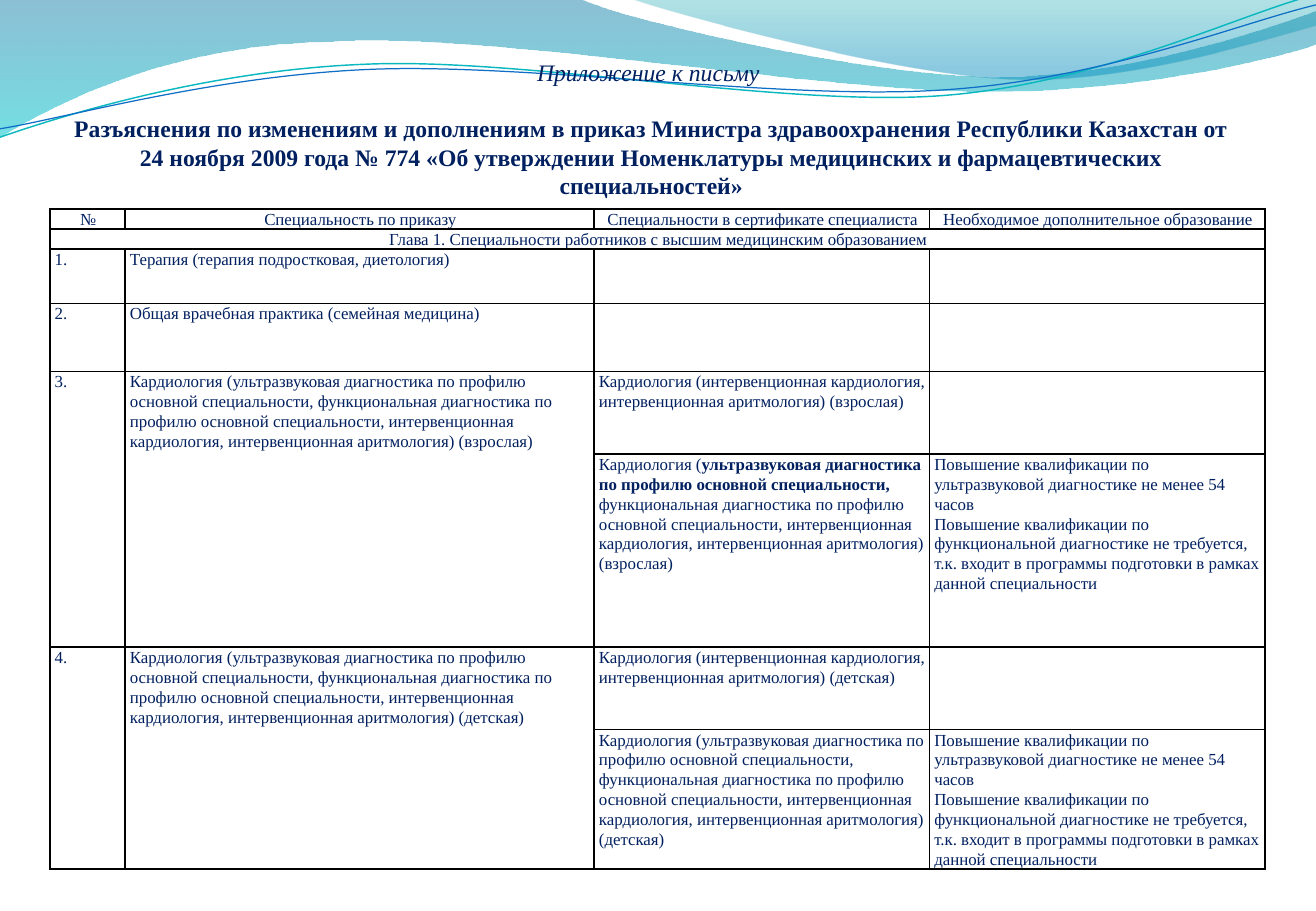
from lxml import etree
from pptx import Presentation
from pptx import util as u
from pptx.dml.color import RGBColor
from pptx.enum import text
from pptx.oxml import ns

NAVY = RGBColor(0x00, 0x20, 0x60)
DEEP_BLUE = RGBColor(0x00, 0x74, 0xA1)
CYAN = RGBColor(0x00, 0xC6, 0xCF)
TEAL = RGBColor(0x00, 0xA1, 0xA9)
SKY = RGBColor(0x00, 0x8B, 0xBF)
LINE_TEAL = RGBColor(0x0A, 0xB8, 0xBF)
LINE_BLUE = RGBColor(0x0F, 0x6F, 0xC6)
BLACK = RGBColor(0x00, 0x00, 0x00)

LEFT_WAVE = [
    (0, 0), (4.77, -0.01),
    (5.15, 0.17, 7.19, 0.63, 8.22, 0.63), (9.24, 0.63, 10.38, 0.26, 10.83, 0.09),
    (10.84, 0.36),
    (10.65, 0.44, 9.42, 0.76, 8.08, 0.75), (6.74, 0.75, 4.14, 0.28, 2.79, 0.34),
    (1.4, 0.36, 0.5, 0.83, -0.01, 1.13),
]
RIGHT_WAVE = [
    (5.19, -0.01),
    (5.52, 0.11, 7.39, 0.62, 8.33, 0.65), (9.27, 0.69, 10.42, 0.32, 10.83, 0.21),
    (10.83, 0),
]
TEAL_CURVE = [
    (0, 1.13), (0.52, 0.95, 1.71, 0.58, 3, 0.53),
    (4.28, 0.47, 6.42, 0.88, 7.72, 0.79), (9.02, 0.7, 10.17, 0.13, 10.81, -0.04),
]
BLUE_CURVE = [
    (0, 1.06), (0.51, 0.98, 1.77, 0.62, 3.07, 0.57),
    (4.36, 0.52, 6.47, 0.83, 7.76, 0.74), (9.06, 0.66, 10.2, 0.19, 10.83, 0.04),
]

COLUMN_WIDTHS = [0.62, 3.86, 2.76, 2.76]
ROW_HEIGHTS = [0.16, 0.16, 0.45, 0.56, 0.68, 1.59, 0.68, 1.14]
MERGES = [(1, 0, 1, 3), (4, 0, 5, 0), (4, 1, 5, 1), (6, 0, 7, 0), (6, 1, 7, 1)]

ULTRASOUND = "ультразвуковая диагностика по профилю основной специальности,"
FUNCTIONAL = " функциональная диагностика по профилю основной специальности, "
INTERVENTION = "интервенционная кардиология, интервенционная аритмология)"
TRAINING = (
    "Повышение квалификации по ультразвуковой диагностике не менее 54 часов\n"
    "Повышение квалификации по функциональной диагностике не требуется, "
    "т.к. входит в программы подготовки в рамках данной специальности"
)


def cardiology(patients):
    """Return the full cardiology specialty for a group of patients."""
    return f"Кардиология ({ULTRASOUND}{FUNCTIONAL}{INTERVENTION} ({patients})"


def cardiology_short(patients):
    """Return the interventional cardiology specialty for a group of patients."""
    return f"Кардиология ({INTERVENTION} ({patients})"


SPECIALTIES = [
    ["№", "Специальность по приказу", "Специальности в сертификате специалиста",
     "Необходимое дополнительное образование"],
    ["Глава 1. Специальности работников с высшим медицинским образованием", "", "", ""],
    ["1.", "Терапия (терапия подростковая, диетология)", "", ""],
    ["2.", "Общая врачебная практика (семейная медицина)", "", ""],
    ["3.", cardiology("взрослая"), cardiology_short("взрослая"), ""],
    ["", "", cardiology("взрослая"), TRAINING],
    ["4.", cardiology("детская"), cardiology_short("детская"), ""],
    ["", "", cardiology("детская"), TRAINING],
]
BOLD_PARTS = {(5, 2): ULTRASOUND}


class SlideBuilder:
    """Holds the text style and the current slide."""

    font_name = "Times New Roman"
    font_color = NAVY

    def __init__(self, presentation):
        """Add a title-only slide."""
        self.slide = presentation.slides.add_slide(presentation.slide_layouts[5])

    def style(self, font, size, bold=False, italic=False):
        """Apply the slide's font to a font object."""
        font.name, font.size = self.font_name, u.Pt(size)
        font.bold, font.italic = bold, italic
        font.color.rgb = self.font_color

    def add_run(self, paragraph, words, size, bold=False, italic=False):
        """Add one styled run."""
        run = paragraph.add_run()
        run.text = words
        self.style(run.font, size, bold, italic)

    def outline(self, steps, close):
        """Draw a freeform whose six-number steps are Bézier curves."""
        points = [(u.Inches(x), u.Inches(y))
                  for step in steps for x, y in zip(step[::2], step[1::2])]
        builder = self.slide.shapes.build_freeform(*points[0])
        builder.add_line_segments(points[1:], close=close)
        shape = builder.convert_to_shape()
        segments = iter(list(shape.element.iter(ns.qn("a:lnTo"))))
        for step in steps[1:]:
            segment = next(segments)
            if len(step) == 6:
                segment.tag = ns.qn("a:cubicBezTo")
                for _ in range(2):
                    extra = next(segments)
                    segment.append(extra[0])
                    extra.getparent().remove(extra)
        shape.shadow.inherit = False
        return shape

    def add_wave(self, steps, stops):
        """Add a wave with a translucent vertical gradient."""
        shape = self.outline(steps, True)
        shape.line.fill.background()
        shape.fill.gradient()
        shape.fill.gradient_angle = 270
        for stop, (position, color, _) in zip(shape.fill.gradient_stops, stops):
            stop.position, stop.color.rgb = position, color
        colors = shape.element.spPr.iter(ns.qn("a:srgbClr"))
        for element, (_, _, opacity) in zip(colors, stops):
            etree.SubElement(element, ns.qn("a:alpha"), val=str(opacity * 1000))

    def add_curve(self, steps, color, width):
        """Add an open curved line."""
        shape = self.outline(steps, False)
        shape.fill.background()
        shape.line.color.rgb, shape.line.width = color, u.Pt(width)

    def add_title(self, note, heading):
        """Place the title above the waves."""
        title = self.slide.shapes.title
        title.element.getparent().append(title.element)
        title.left, title.top = u.Inches(0.54), u.Inches(0.3)
        title.width, title.height = u.Inches(9.64), u.Inches(1.57)
        frame = title.text_frame
        frame.word_wrap, frame.auto_size = True, text.MSO_AUTO_SIZE.NONE
        frame.vertical_anchor = text.MSO_ANCHOR.BOTTOM
        frame.margin_left = frame.margin_right = 0
        frame.margin_top, frame.margin_bottom = u.Inches(0.05), u.Inches(0.23)
        first, second = frame.paragraphs[0], frame.add_paragraph()
        self.add_run(first, note, 14, italic=True)
        self.add_run(second, heading, 14, bold=True)
        first.space_after = u.Pt(16.5)
        for paragraph in (first, second):
            paragraph.alignment = text.PP_ALIGN.CENTER
            paragraph.space_before = u.Pt(0)

    def add_borders(self, cell):
        """Draw the four borders of a cell."""
        properties = cell._tc.get_or_add_tcPr()
        for index, side in enumerate(("lnL", "lnR", "lnT", "lnB")):
            line = etree.Element(ns.qn(f"a:{side}"), w=str(u.Pt(1)))
            fill = etree.SubElement(line, ns.qn("a:solidFill"))
            etree.SubElement(fill, ns.qn("a:srgbClr"), val=str(BLACK))
            properties.insert(index, line)

    def fill_cell(self, cell, words, bold_part, centered):
        """Write and format one table cell."""
        cell.margin_left, cell.margin_right = u.Inches(0.04), u.Inches(0.03)
        cell.margin_top = cell.margin_bottom = 0
        cell.fill.background()
        self.add_borders(cell)
        for index, line in enumerate(words.split("\n")):
            frame = cell.text_frame
            paragraph = frame.add_paragraph() if index else frame.paragraphs[0]
            paragraph.line_spacing = 1.07
            paragraph.alignment = text.PP_ALIGN.CENTER if centered else text.PP_ALIGN.LEFT
            self.style(paragraph.font, 10)
            before, bold, after = line.partition(bold_part) if bold_part else (line, "", "")
            for part in filter(None, (before, bold, after)):
                self.add_run(paragraph, part, 10, bold=part == bold_part)

    def add_table(self, rows):
        """Add the table of specialties."""
        table = self.slide.shapes.add_table(
            len(rows), len(COLUMN_WIDTHS), u.Inches(0.41), u.Inches(1.72),
            u.Inches(sum(COLUMN_WIDTHS)), u.Inches(sum(ROW_HEIGHTS))).table
        table.first_row = table.horz_banding = False
        for column, width in zip(table.columns, COLUMN_WIDTHS):
            column.width = u.Inches(width)
        for row, height in zip(table.rows, ROW_HEIGHTS):
            row.height = u.Inches(height)
        for top, left, bottom, right in MERGES:
            table.cell(top, left).merge(table.cell(bottom, right))
        for r, row in enumerate(rows):
            for c, words in enumerate(row):
                self.fill_cell(table.cell(r, c), words, BOLD_PARTS.get((r, c)), r < 2)


def main():
    """Build and save the presentation."""
    presentation = Presentation()
    presentation.slide_width, presentation.slide_height = u.Inches(10.83), u.Inches(7.5)
    builder = SlideBuilder(presentation)
    builder.add_wave(LEFT_WAVE, [(0, DEEP_BLUE, 45), (1, CYAN, 55)])
    builder.add_wave(RIGHT_WAVE, [(0, TEAL, 30), (0.8, SKY, 45)])
    builder.add_curve(TEAL_CURVE, LINE_TEAL, 0.85)
    builder.add_curve(BLUE_CURVE, LINE_BLUE, 0.75)
    builder.add_title(
        "Приложение к письму ",
        "Разъяснения по изменениям и дополнениям в приказ Министра здравоохранения "
        "Республики Казахстан от 24 ноября 2009 года № 774 «Об утверждении Номенклатуры "
        "медицинских и фармацевтических специальностей»")
    builder.add_table(SPECIALTIES)
    presentation.save("out.pptx")


if __name__ == "__main__":
    main()
